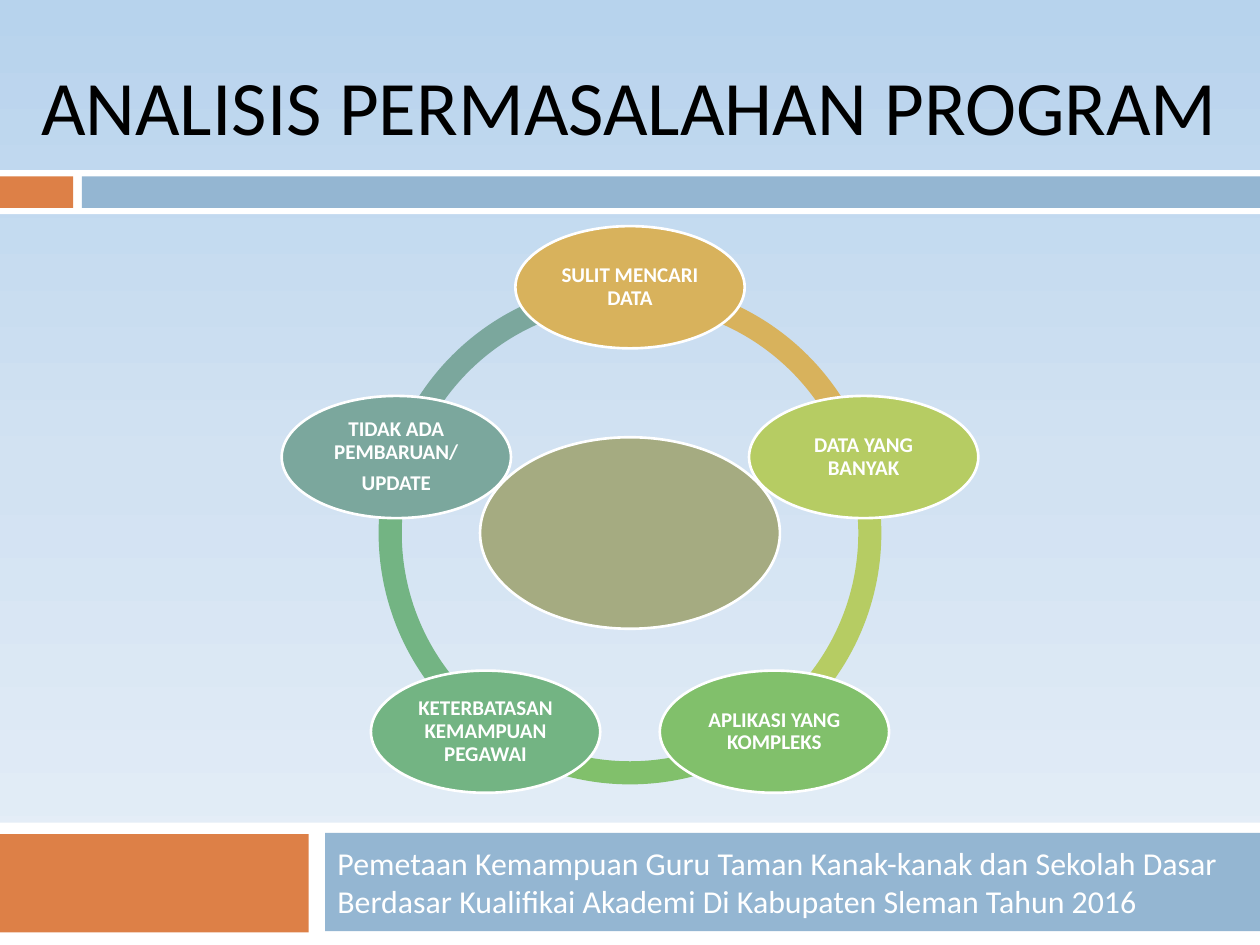
from copy import deepcopy
from math import cos, radians, sin

from pptx import Presentation
from pptx.dml.color import RGBColor
from pptx.enum.shapes import MSO_SHAPE
from pptx.enum.text import MSO_ANCHOR, PP_ALIGN
from pptx.oxml.ns import qn
from pptx.util import Inches, Pt

COLORS = {
    "black": "000000", "white": "FFFFFF", "orange": "DD8047", "blue": "94B6D2",
    "sky_top": "B7D3ED", "sky_middle": "D2E2F2", "sky_bottom": "E8F0F8",
    "hub": "A5AB81", "gold": "D8B25C", "lime": "B6CC63", "leaf": "81C06B",
    "green": "73B483", "teal": "7BA79D",
}
BANDS = [
    ("white", 0, 1.35, 10, 0.35),
    ("orange", 0, 1.4, 0.58, 0.25),
    ("blue", 0.65, 1.4, 9.35, 0.25),
    ("white", 0, 6.53, 10, 0.97),
    ("orange", 0, 6.62, 2.45, 0.78),
    ("blue", 2.58, 6.61, 7.42, 0.78),
]
PROBLEMS = [  # clockwise from the top
    ("gold", ["SULIT MENCARI DATA"]),
    ("lime", ["DATA YANG BANYAK"]),
    ("leaf", ["APLIKASI YANG KOMPLEKS"]),
    ("green", ["KETERBATASAN KEMAMPUAN PEGAWAI"]),
    ("teal", ["TIDAK ADA PEMBARUAN/", "UPDATE"]),
]
SUBTITLE = ("Pemetaan Kemampuan Guru Taman Kanak-kanak dan Sekolah Dasar "
            "Berdasar Kualifikai Akademi Di Kabupaten Sleman Tahun 2016")
CENTER_X, CENTER_Y = 5, 4.23
RING_SIZE, RING_THICKNESS, NODE_RADIUS = 3.99, 0.046, 1.95
NODE_SIZE, HUB_SIZE = (1.82, 0.97), (2.38, 1.52)


def rgb(color):
    return RGBColor.from_string(COLORS[color])


def set_attributes(target, values):
    for name, value in values.items():
        setattr(target, name, value)


class SlideBuilder:
    font_name = "Calibri"
    node_frame = {
        "word_wrap": True, "vertical_anchor": MSO_ANCHOR.MIDDLE,
        **{f"margin_{side}": Inches(0.02) for side in ("left", "top", "right", "bottom")},
    }
    node_paragraph = {"alignment": PP_ALIGN.CENTER, "line_spacing": 0.9, "space_after": Pt(5)}

    def __init__(self, slide):
        self.slide = slide

    def background(self, colors):
        """Fill the background with evenly spaced colours from top to bottom."""
        fill = self.slide.background.fill
        fill.gradient()
        fill.gradient_angle = 270
        stop_list = self.slide.element.find(".//" + qn("a:gsLst"))
        stop_list.insert(1, deepcopy(stop_list[0]))
        for index, (stop, color) in enumerate(zip(fill.gradient_stops, colors)):
            stop.position = index / (len(colors) - 1)
            stop.color.rgb = rgb(color)

    def add_text(self, shape, lines, frame, paragraph_format, size, color, bold=False):
        text_frame = shape.text_frame
        text_frame.text = "\n".join(lines)
        set_attributes(text_frame, frame)
        for paragraph in text_frame.paragraphs:
            set_attributes(paragraph, paragraph_format)
            font = paragraph.runs[0].font
            set_attributes(font, {"name": self.font_name, "size": Pt(size), "bold": bold})
            font.color.rgb = rgb(color)

    def title(self, text, left, top, width, height):
        title = self.slide.shapes.title
        set_attributes(title, {"left": Inches(left), "top": Inches(top),
                               "width": Inches(width), "height": Inches(height)})
        self.add_text(title, [text], {"word_wrap": True, "vertical_anchor": MSO_ANCHOR.BOTTOM},
                      {"alignment": PP_ALIGN.CENTER}, 44, "black")

    def subtitle(self, text, left, top, width, height):
        box = self.slide.shapes.add_textbox(*map(Inches, (left, top, width, height)))
        self.add_text(box, [text], {"word_wrap": True, "vertical_anchor": MSO_ANCHOR.MIDDLE},
                      {"space_before": Pt(7)}, 18.2, "white")

    def shape(self, kind, color, left, top, width, height):
        shape = self.slide.shapes.add_shape(kind, *map(Inches, (left, top, width, height)))
        shape.shadow.inherit = False
        shape.fill.solid()
        shape.fill.fore_color.rgb = rgb(color)
        shape.line.fill.background()
        return shape

    def ring_segment(self, color, start, end):
        """Draw the part of the ring between two angles, in degrees clockwise."""
        half = RING_SIZE / 2
        arc = self.shape(MSO_SHAPE.BLOCK_ARC, color, CENTER_X - half, CENTER_Y - half,
                         RING_SIZE, RING_SIZE)
        for index, value in enumerate((start % 360 * 0.6, end % 360 * 0.6, RING_THICKNESS)):
            arc.adjustments[index] = value

    def ellipse(self, color, center_x, center_y, size, lines=()):
        width, height = size
        ellipse = self.shape(MSO_SHAPE.OVAL, color, center_x - width / 2,
                             center_y - height / 2, width, height)
        ellipse.line.color.rgb = rgb("white")
        ellipse.line.width = Pt(1.5)
        if lines:
            self.add_text(ellipse, lines, self.node_frame, self.node_paragraph, 12, "white", True)


def main():
    presentation = Presentation()
    presentation.slide_width, presentation.slide_height = Inches(10), Inches(7.5)
    builder = SlideBuilder(presentation.slides.add_slide(presentation.slide_layouts[5]))
    builder.background(["sky_top", "sky_middle", "sky_bottom"])
    for color, *place in BANDS:
        builder.shape(MSO_SHAPE.RECTANGLE, color, *place)
    builder.title("ANALISIS PERMASALAHAN PROGRAM", 0, 0, 10, 1.25)
    builder.subtitle(SUBTITLE, 2.58, 6.62, 7.33, 0.75)

    step = 360 / len(PROBLEMS)
    angles = [270 + step * index for index in range(len(PROBLEMS))]
    for angle, (color, _) in zip(angles, PROBLEMS):
        builder.ring_segment(color, angle, angle + step)
    builder.ellipse("hub", CENTER_X, CENTER_Y, HUB_SIZE)
    for angle, (color, lines) in zip(angles, PROBLEMS):
        builder.ellipse(color, CENTER_X + NODE_RADIUS * cos(radians(angle)),
                        CENTER_Y + NODE_RADIUS * sin(radians(angle)), NODE_SIZE, lines)
    presentation.save("out.pptx")


if __name__ == "__main__":
    main()
